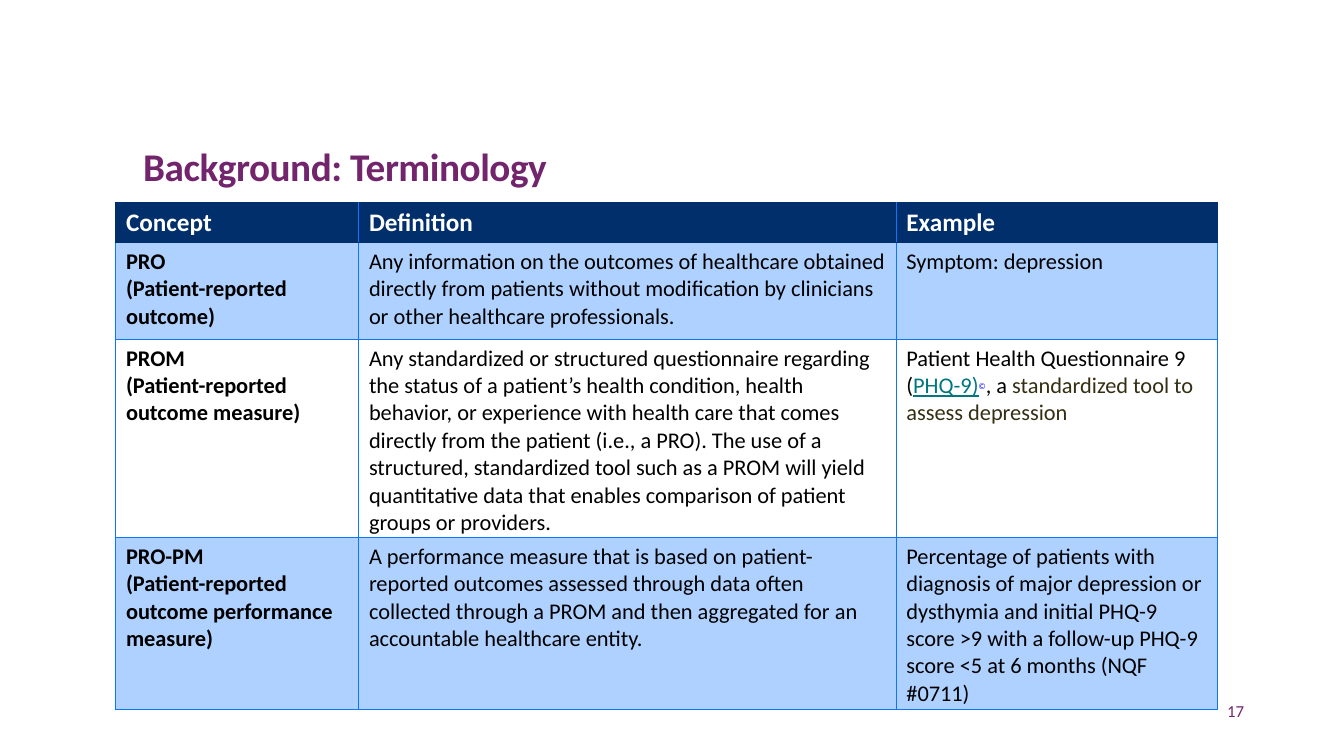
from lxml import etree
from pptx import Presentation
from pptx import util as u
from pptx.dml.color import RGBColor
from pptx.enum import text
from pptx.oxml.ns import qn

PURPLE, NAVY, BLUE, PALE = "72246C", "002F6C", "0D75FF", "AED1FF"
WIDTH, HEIGHT = 13.33, 7.5


def style(font, size, color, bold=False):
    font.name = "Calibri"
    font.size = u.Pt(size)
    font.bold = bold
    font.color.rgb = RGBColor.from_string(color)


def add_border(cell, side, color):
    line = etree.SubElement(cell._tc.get_or_add_tcPr(), qn(f"a:ln{side}"), w=str(u.Pt(0.75)))
    fill = etree.SubElement(line, qn("a:solidFill"))
    etree.SubElement(fill, qn("a:srgbClr"), val=color)


presentation = Presentation()
presentation.slide_width = u.Inches(WIDTH)
presentation.slide_height = u.Inches(HEIGHT)
slide = presentation.slides.add_slide(presentation.slide_layouts[6])

labels = [
    ("Background: Terminology", (1.42, 1.5, 10.91, 0.74), 28, True, text.PP_ALIGN.LEFT),
    ("17", (11.67, 6.95, 0.67, 0.3), 12, False, text.PP_ALIGN.RIGHT),
]
for wording, place, size, bold, alignment in labels:
    frame = slide.shapes.add_textbox(*map(u.Inches, place)).text_frame
    frame.word_wrap = True
    frame.margin_left = frame.margin_right = frame.margin_top = frame.margin_bottom = 0
    paragraph = frame.paragraphs[0]
    paragraph.alignment = alignment
    run = paragraph.add_run()
    run.text = wording
    style(paragraph.font, size, PURPLE, bold)
    if bold:
        paragraph.line_spacing = 0.8
        run.font._element.set("spc", "-30")

rows = [
    ("Concept", "Definition", "Example"),
    (
        "PRO\n(Patient-reported outcome)",
        "Any information on the outcomes of healthcare obtained directly from patients "
        "without modification by clinicians or other healthcare professionals.",
        "Symptom: depression",
    ),
    (
        "PROM\n(Patient-reported outcome measure)",
        "Any standardized or structured questionnaire regarding the status of a patient’s "
        "health condition, health behavior, or experience with health care that comes "
        "directly from the patient (i.e., a PRO). The use of a structured, standardized tool "
        "such as a PROM will yield quantitative data that enables comparison of patient "
        "groups or providers.",
        "",
    ),
    (
        "PRO-PM\n(Patient-reported outcome performance measure)",
        "A performance measure that is based on patient-reported outcomes assessed through "
        "data often collected through a PROM and then aggregated for an accountable "
        "healthcare entity.",
        "Percentage of patients with diagnosis of major depression or dysthymia and initial "
        "PHQ-9 score >9 with a follow-up PHQ-9 score <5 at 6 months (NQF #0711)",
    ),
]
column_widths = [2.41, 5.33, 3.19]
row_heights = [0.3, 0.96, 1.6, 1.28]
table = slide.shapes.add_table(
    len(rows), len(column_widths), u.Inches(1.15), u.Inches(2.01),
    u.Inches(sum(column_widths)), u.Inches(sum(row_heights)),
).table
table.first_row = table.horz_banding = False
for column, width in zip(table.columns, column_widths):
    column.width = u.Inches(width)
for row, height in zip(table.rows, row_heights):
    row.height = u.Inches(height)

for row_index, wordings in enumerate(rows):
    header = row_index == 0
    for column_index, wording in enumerate(wordings):
        cell = table.cell(row_index, column_index)
        cell.text = wording
        for paragraph in cell.text_frame.paragraphs:
            if header:
                paragraph.alignment = text.PP_ALIGN.JUSTIFY
                style(paragraph.font, 18, "FFFFFF", True)
            else:
                style(paragraph.font, 16, "000000", column_index == 0)
        navy_sides = {
            "L": header and column_index == 0,
            "R": header and column_index == 2,
            "T": row_index < 2,
            "B": header,
        }
        for side, navy in navy_sides.items():
            add_border(cell, side, NAVY if navy else BLUE)
        if row_index == 2:
            cell.fill.background()
        else:
            cell.fill.solid()
            cell.fill.fore_color.rgb = RGBColor.from_string(NAVY if header else PALE)

questionnaire = table.cell(2, 2).text_frame.paragraphs[0]
questionnaire_runs = [
    ("Patient Health Questionnaire 9 (", 16, "000000"),
    ("PHQ-9)", 16, "007681"),
    ("©", 10.5, "0000FF"),
    (", a ", 16, "000000"),
    ("standardized tool to assess depression", 16, "342F13"),
]
for wording, size, color in questionnaire_runs:
    run = questionnaire.add_run()
    run.text = wording
    style(run.font, size, color)
    if wording == "PHQ-9)":
        run.font.underline = True
    if wording == "©":
        run.font._element.set("baseline", "30000")

presentation.save("out.pptx")
